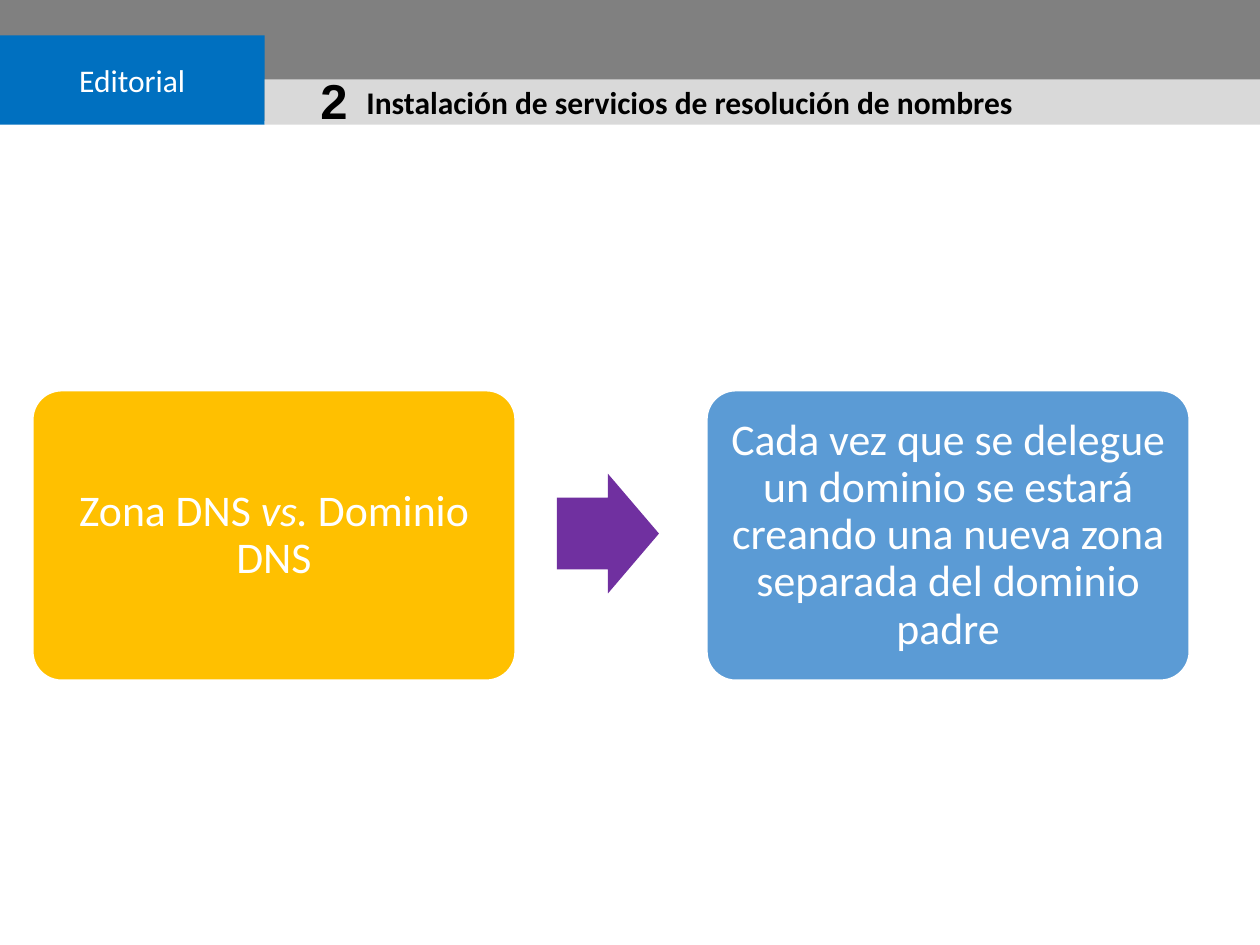
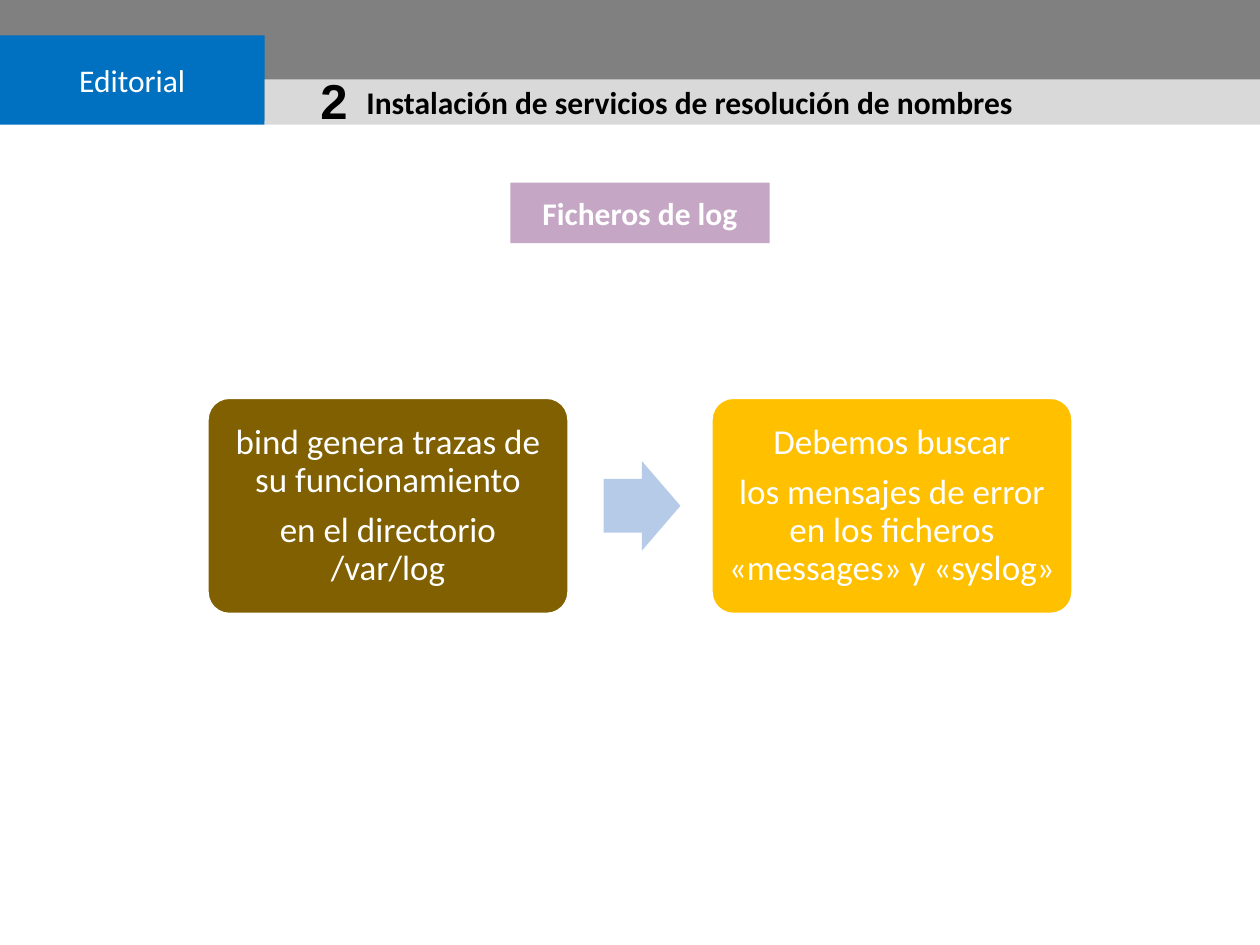
from pptx import Presentation, util as u
from pptx.dml.color import RGBColor
from pptx.enum import shapes, text

WHITE = "FFFFFF"
BLACK = "000000"
GREY = "808080"
LIGHT_GREY = "D9D9D9"
BLUE = "0070C0"
AMBER = "FFC000"

presentation = Presentation()
presentation.slide_width = u.Inches(10)
presentation.slide_height = u.Inches(7.5)


def add_block(slide, kind, box, fill, line=None):
    shape = slide.shapes.add_shape(kind, *[u.Inches(length) for length in box])
    shape.shadow.inherit = False
    shape.fill.solid()
    shape.fill.fore_color.rgb = RGBColor.from_string(fill)
    if line:
        shape.line.color.rgb = RGBColor.from_string(line)
        shape.line.width = u.Pt(1)
    else:
        shape.line.fill.background()
    return shape


def write(shape, paragraphs, size, color=WHITE, bold=False, font="Calibri",
          align=text.PP_ALIGN.CENTER, anchor=text.MSO_ANCHOR.MIDDLE):
    frame = shape.text_frame
    frame.word_wrap = True
    frame.vertical_anchor = anchor
    for index, runs in enumerate(paragraphs):
        paragraph = frame.add_paragraph() if index else frame.paragraphs[0]
        paragraph.alignment = align
        for words, italic in runs:
            run = paragraph.add_run()
            run.text = words
            run.font.name = font
            run.font.size = u.Pt(size)
            run.font.bold = bold
            run.font.italic = italic
            run.font.color.rgb = RGBColor.from_string(color)
    return frame


RECTANGLE = shapes.MSO_SHAPE.RECTANGLE
ROUNDED = shapes.MSO_SHAPE.ROUNDED_RECTANGLE
ARROW = shapes.MSO_SHAPE.RIGHT_ARROW

flows = [
    {
        "heading": None,
        "lefts": (0.26, 5.61), "top": 3.1, "size": (3.83, 2.3),
        "arrow": (4.42, 3.76, 0.81, 0.95), "arrow_fill": "7030A0",
        "fills": (AMBER, "5B9BD5"), "font_size": 25, "inset": 0.1,
        "texts": (
            [[("Zona DNS ", False), ("vs.", True), (" Dominio DNS", False)]],
            [[("Cada vez que se delegue un dominio se estará creando "
               "una nueva zona separada del dominio padre", False)]],
        ),
    },
    {
        "heading": "Ficheros de log",
        "lefts": (1.65, 5.65), "top": 3.16, "size": (2.86, 1.71),
        "arrow": (4.79, 3.66, 0.61, 0.71), "arrow_fill": "B5CBE7",
        "fills": ("806000", AMBER), "font_size": 20, "inset": 0.08,
        "texts": (
            [[("bind genera trazas de su funcionamiento", False)],
             [("en el directorio /var/log", False)]],
            [[("Debemos buscar", False)],
             [("los mensajes de error en los ficheros "
               "«messages» y «syslog»", False)]],
        ),
    },
]

for flow in flows:
    slide = presentation.slides.add_slide(presentation.slide_layouts[6])

    add_block(slide, RECTANGLE, (0, 0, 10, 0.96), GREY)
    publisher = add_block(slide, RECTANGLE, (0, 0.28, 2.1, 0.71), BLUE)
    write(publisher, [[("Editorial", False)]], 18)
    add_block(slide, RECTANGLE, (2.1, 0.63, 7.9, 0.36), LIGHT_GREY)
    unit_number = add_block(slide, RECTANGLE, (2.14, 0.64, 1.02, 0.31), LIGHT_GREY)
    write(unit_number, [[("2", False)]], 28, BLACK, True, "Arial")
    unit_title = slide.shapes.add_textbox(
        u.Inches(2.81), u.Inches(0.61), u.Inches(6.61), u.Inches(0.4))
    write(unit_title, [[("Instalación de servicios de resolución de nombres", False)]],
          18, BLACK, True, align=text.PP_ALIGN.LEFT, anchor=text.MSO_ANCHOR.TOP)

    if flow["heading"]:
        heading = add_block(slide, RECTANGLE, (4.05, 1.45, 2.06, 0.48), "C5A7C5")
        write(heading, [[(flow["heading"], False)]], 18, bold=True)

    for left, fill, paragraphs in zip(flow["lefts"], flow["fills"], flow["texts"]):
        step = add_block(slide, ROUNDED, (left, flow["top"], *flow["size"]), fill, WHITE)
        step.adjustments[0] = 0.1
        frame = write(step, paragraphs, flow["font_size"])
        inset = u.Inches(flow["inset"])
        frame.margin_left = frame.margin_right = inset
        frame.margin_top = frame.margin_bottom = inset
        for paragraph in frame.paragraphs:
            paragraph.line_spacing = 0.9
            paragraph.space_after = u.Pt(0.35 * flow["font_size"])

    arrow = add_block(slide, ARROW, flow["arrow"], flow["arrow_fill"])
    arrow.adjustments[0] = 0.6
    arrow.adjustments[1] = 0.5

presentation.save("out.pptx")
